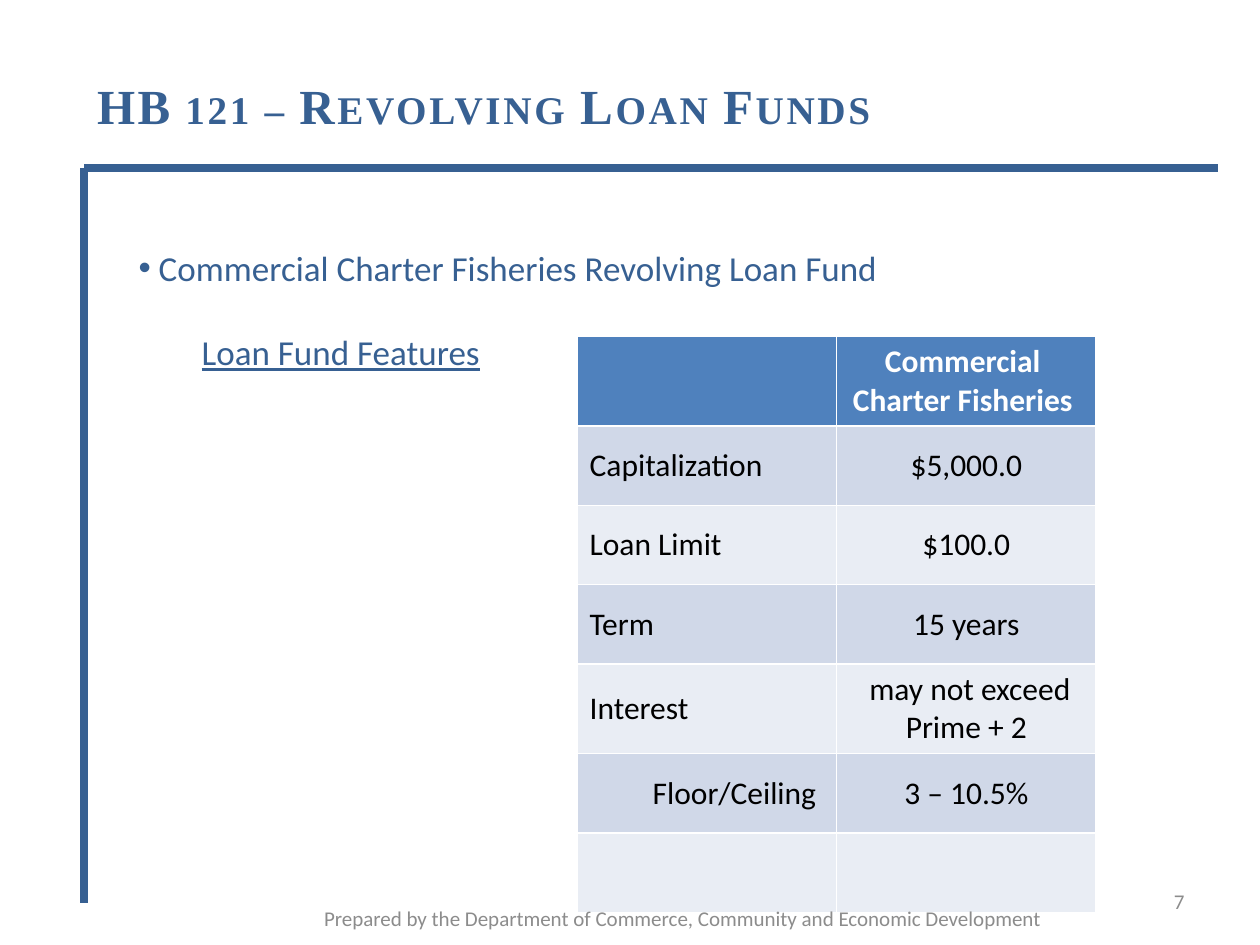
from lxml import etree
from pptx import Presentation
from pptx.dml.color import RGBColor
from pptx.enum.shapes import MSO_CONNECTOR
from pptx.enum.text import MSO_ANCHOR, MSO_AUTO_SIZE, PP_ALIGN
from pptx.oxml.ns import qn
from pptx.util import Inches, Pt

COLORS = {
    "navy": "376092",
    "header": "4F81BD",
    "band_dark": "D0D8E8",
    "band_light": "E9EDF4",
    "white": "FFFFFF",
    "black": "000000",
    "gray": "8C8C8C",
}


def set_font(font, size, color, name="Calibri", bold=False):
    font.name, font.size, font.bold = name, Pt(size), bold
    font.color.rgb = RGBColor.from_string(COLORS[color])


def place(shape, left, top, width, height):
    shape.left, shape.top = Inches(left), Inches(top)
    shape.width, shape.height = Inches(width), Inches(height)


prs = Presentation()
prs.slide_width, prs.slide_height = Inches(10), Inches(7.5)
slide = prs.slides.add_slide(prs.slide_layouts[1])

# Title in spaced small caps
title = slide.shapes.title
place(title, 0.67, 0.17, 8.92, 1.42)
title.text_frame.text = "HB 121 – Revolving Loan Funds"
title.text_frame.vertical_anchor = MSO_ANCHOR.MIDDLE
title.text_frame.auto_size = MSO_AUTO_SIZE.NONE
heading = title.text_frame.paragraphs[0]
heading.alignment = PP_ALIGN.LEFT
heading.line_spacing = Pt(27)
set_font(heading.font, 28, "navy", "Times New Roman", True)
heading_props = heading.runs[0].font._element
heading_props.set("cap", "small")
heading_props.set("spc", "150")

# Frame lines from the top left corner
for end_x, end_y in [(0.67, 7.17), (9.67, 1.33)]:
    rule = slide.shapes.add_connector(
        MSO_CONNECTOR.STRAIGHT, Inches(0.67), Inches(1.33), Inches(end_x), Inches(end_y))
    rule.line.color.rgb = RGBColor.from_string(COLORS["navy"])
    rule.line.width = Pt(4.5)
    etree.SubElement(rule._element.spPr, qn("a:effectLst"))

# Fund name and its subheading
body = slide.placeholders[1]
place(body, 1, 1.58, 7.33, 3.8)
fund_text = body.text_frame
fund_text.auto_size = MSO_AUTO_SIZE.NONE
fund_text.margin_top = Inches(0.38)
fund_text.text = " Commercial Charter Fisheries Revolving Loan Fund\nLoan Fund Features"
fund, features = fund_text.paragraphs
for line, bullet, indent, gap in [(fund, "•", 0, 0), (features, None, 0.5, 24)]:
    set_font(line.font, 20, "navy")
    line.space_before = Pt(gap)
    line_props = line._p.get_or_add_pPr()
    line_props.set("marL", str(Inches(indent)))
    line_props.set("indent", "0")
    if bullet:
        etree.SubElement(line_props, qn("a:buChar"), char=bullet)
        line_props.append(line_props.find(qn("a:defRPr")))
    else:
        line_props.find(qn("a:defRPr")).addprevious(
            etree.SubElement(line_props, qn("a:buNone")))
features.runs[0].font.underline = True

# Loan terms table
loan_terms = [
    ("", "Commercial \vCharter Fisheries "),
    ("Capitalization", "$5,000.0"),
    ("Loan Limit", "$100.0"),
    ("Term", "15 years"),
    ("Interest", " may not exceed Prime + 2"),
    ("Floor/Ceiling", "3 – 10.5%"),
    ("", ""),
]
terms_table = slide.shapes.add_table(
    len(loan_terms), 2, Inches(4.58), Inches(2.67), Inches(4.12), Inches(4.41)).table
for row, texts in enumerate(loan_terms):
    terms_table.rows[row].height = Inches(0.63)
    is_header = row == 0
    fill = "header" if is_header else "band_dark" if row % 2 else "band_light"
    for col, text in enumerate(texts):
        cell = terms_table.cell(row, col)
        cell.fill.solid()
        cell.fill.fore_color.rgb = RGBColor.from_string(COLORS[fill])
        cell.vertical_anchor = MSO_ANCHOR.MIDDLE
        cell.text = text
        entry = cell.text_frame.paragraphs[0]
        entry.alignment = PP_ALIGN.CENTER if col else PP_ALIGN.LEFT
        set_font(entry.font, 18, "white" if is_header else "black", bold=is_header)
        if text == "Floor/Ceiling":
            entry._p.get_or_add_pPr().set("marL", str(Inches(0.5)))

# Page number and footer
footers = [
    ("7", (7.17, 6.95, 2.33, 0.4), PP_ALIGN.RIGHT),
    ("Prepared by the Department of Commerce, Community and Economic Development",
     (1.92, 7.08, 7, 0.42), PP_ALIGN.CENTER),
]
for text, (left, top, width, height), alignment in footers:
    footer = slide.shapes.add_textbox(
        Inches(left), Inches(top), Inches(width), Inches(height)).text_frame
    footer.word_wrap = True
    footer.vertical_anchor = MSO_ANCHOR.MIDDLE
    footer.text = text
    footer.paragraphs[0].alignment = alignment
    set_font(footer.paragraphs[0].font, 12, "gray")

prs.save("out.pptx")
